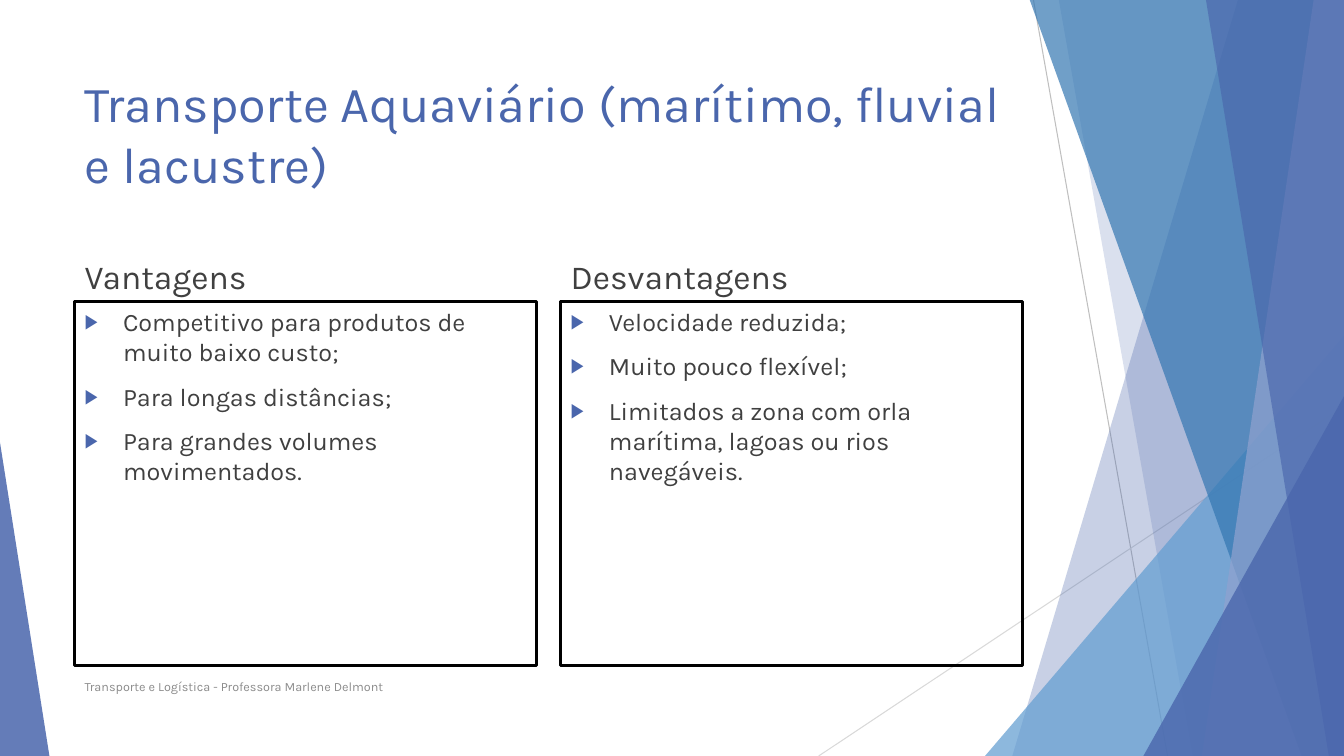
from lxml import etree
from pptx import Presentation
from pptx import util as u
from pptx.dml.color import RGBColor
from pptx.enum import shapes, text
from pptx.oxml.ns import qn

INDIGO = RGBColor(0x4A, 0x66, 0xAC)
SKY = RGBColor(0x62, 0x9D, 0xD1)
OCEAN = RGBColor(0x34, 0x77, 0xB2)
LAVENDER = RGBColor(0x90, 0xA2, 0xCF)
DARK_GREY = RGBColor(0x40, 0x40, 0x40)
MID_GREY = RGBColor(0x8C, 0x8C, 0x8C)
LINE_GREY = RGBColor(0xBF, 0xBF, 0xBF)
PALE_GREY = RGBColor(0xD9, 0xD9, 0xD9)
BLACK = RGBColor(0, 0, 0)
WIDTH, HEIGHT = 13.33, 7.5


def write(shape, lines, box, size, color, anchor=text.MSO_ANCHOR.TOP, before=0, bullet=False):
    """Place a text shape and fill it with formatted paragraphs."""
    shape.left, shape.top, shape.width, shape.height = [u.Inches(value) for value in box]
    frame = shape.text_frame
    frame.text = "\n".join(lines)
    frame.word_wrap = True
    frame.auto_size = text.MSO_AUTO_SIZE.NONE
    frame.vertical_anchor = anchor
    for paragraph in frame.paragraphs:
        paragraph.alignment = text.PP_ALIGN.LEFT
        paragraph.space_before = u.Pt(before)
        font = paragraph.runs[0].font
        font.name, font.size, font.bold = "Karla", u.Pt(size), False
        font.color.rgb = color
        if bullet:
            properties = paragraph._p.get_or_add_pPr()
            properties.set("marL", str(u.Inches(0.38)))
            properties.set("indent", str(u.Inches(-0.38)))
            bullet_color = etree.SubElement(properties, qn("a:buClr"))
            etree.SubElement(bullet_color, qn("a:srgbClr"), val=str(INDIGO))
            etree.SubElement(properties, qn("a:buSzPct"), val="80000")
            etree.SubElement(properties, qn("a:buFont"), typeface="Arial")
            etree.SubElement(properties, qn("a:buChar"), char="▶")


presentation = Presentation()
presentation.slide_width = u.Inches(WIDTH)
presentation.slide_height = u.Inches(HEIGHT)
slide = presentation.slides.add_slide(presentation.slide_layouts[4])
title, *bodies = slide.placeholders

# Thin crossing lines
for start_x, start_y, end_x, color in [(10.25, 0, 11.58, LINE_GREY), (WIDTH, 4.03, 8.12, PALE_GREY)]:
    line = slide.shapes.add_connector(
        shapes.MSO_CONNECTOR.STRAIGHT,
        u.Inches(start_x), u.Inches(start_y), u.Inches(end_x), u.Inches(HEIGHT))
    line.line.color.rgb = color
    line.line.width = u.Pt(0.75)
    etree.SubElement(line.element.spPr, qn("a:effectLst"))

# Translucent facets: bands are (top x, bottom x) and reach the right edge,
# triangles are (left, top, width, apex) and reach the bottom edge
facets = [
    ((12.28, 10.04), INDIGO, 30),
    ((10.5, 11.83), INDIGO, 20),
    ((9.77, 3.33, 3.56, 1), SKY, 72),
    ((10.21, 12.91), OCEAN, 70),
    ((13.03, 11.92), LAVENDER, 70),
    ((11.96, 13.18), INDIGO, 65),
    ((11.34, 3.93, 1.99, 1), INDIGO, 80),
    ((0, 4.39, 0.49, 0), INDIGO, 85),
]
for geometry, color, opacity in facets:
    if len(geometry) == 2:
        top_x, bottom_x = geometry
        builder = slide.shapes.build_freeform(u.Inches(top_x), u.Inches(-0.01))
        corners = [(WIDTH, -0.01), (WIDTH, HEIGHT), (bottom_x, HEIGHT)]
        builder.add_line_segments([(u.Inches(x), u.Inches(y)) for x, y in corners])
        facet = builder.convert_to_shape()
    else:
        left, top, width, apex = geometry
        facet = slide.shapes.add_shape(
            shapes.MSO_SHAPE.ISOSCELES_TRIANGLE,
            u.Inches(left), u.Inches(top), u.Inches(width), u.Inches(HEIGHT - top))
        facet.adjustments[0] = apex
    facet.shadow.inherit = False
    facet.line.fill.background()
    facet.fill.solid()
    facet.fill.fore_color.rgb = color
    color_element = facet.element.spPr.find(".//" + qn("a:srgbClr"))
    etree.SubElement(color_element, qn("a:alpha"), val=str(opacity * 1000))

# Bring the placeholders in front of the facets
for placeholder in [title, *bodies]:
    placeholder.element.getparent().append(placeholder.element)

# Title
write(title, ["Transporte Aquaviário (marítimo, fluvial e lacustre)"],
      (0.74, 0.67, 9.4, 1.44), 36, INDIGO)

# Two compared columns: heading above a framed list
columns = [
    ("Vantagens", [
        "Competitivo para produtos de muito baixo custo;",
        "Para longas distâncias;",
        "Para grandes volumes movimentados."]),
    ("Desvantagens", [
        "Velocidade reduzida;",
        "Muito pouco flexível;",
        "Limitados a zona com orla marítima, lagoas ou rios navegáveis."]),
]
for index, (heading, points) in enumerate(columns):
    left = 0.74 + index * 4.82
    heading_body, list_body = bodies[2 * index:2 * index + 2]
    write(heading_body, [heading], (left, 2.36, 4.58, 0.63), 24, DARK_GREY,
          anchor=text.MSO_ANCHOR.BOTTOM, before=10)
    write(list_body, points, (left, 2.99, 4.58, 3.61), 18, DARK_GREY, before=10, bullet=True)
    list_body.line.color.rgb = BLACK
    list_body.line.width = u.Pt(2.25)

# Footer
footer = slide.shapes.add_textbox(0, 0, 0, 0)
write(footer, ["Transporte e Logística - Professora Marlene Delmont"],
      (0.74, 6.61, 6.89, 0.4), 9, MID_GREY, anchor=text.MSO_ANCHOR.MIDDLE)

presentation.save("out.pptx")
